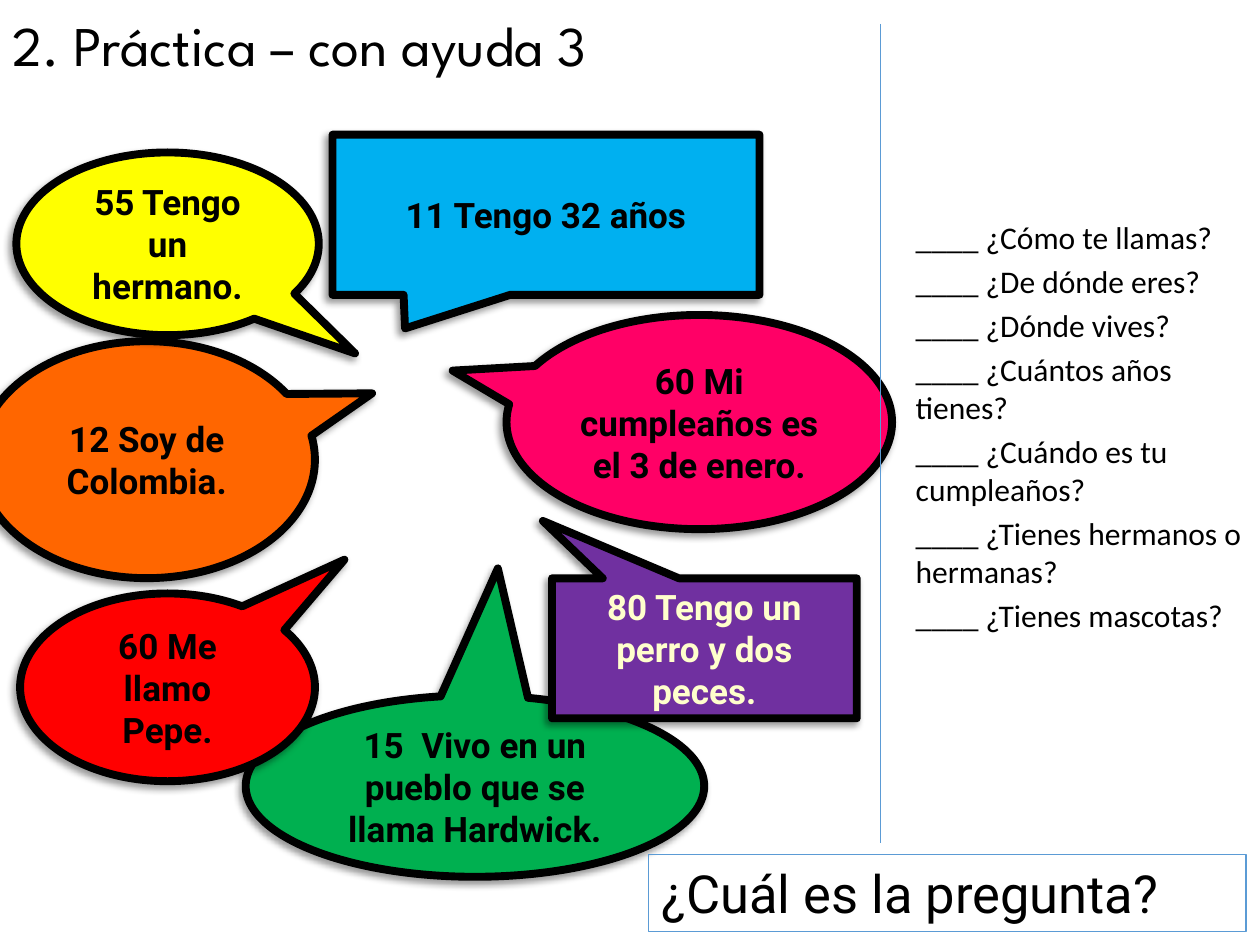
from lxml import etree
from pptx import Presentation
from pptx.dml.color import RGBColor
from pptx.enum import shapes, text
from pptx.oxml import ns
from pptx.util import Pt

BLACK = RGBColor(0, 0, 0)
CREAM = RGBColor(0xFF, 0xFF, 0xCC)
RULE_BLUE = RGBColor(0x5B, 0x9B, 0xD5)
SKY = RGBColor(0x00, 0xB0, 0xF0)
PINK = RGBColor(0xFF, 0x00, 0x66)
GREEN = RGBColor(0x00, 0xB0, 0x50)
ORANGE = RGBColor(0xFF, 0x66, 0x00)
PURPLE = RGBColor(0x70, 0x30, 0xA0)
YELLOW = RGBColor(0xFF, 0xFF, 0x00)
RED = RGBColor(0xFF, 0x00, 0x00)

OVAL = shapes.MSO_SHAPE.OVAL_CALLOUT
BOX = shapes.MSO_SHAPE.RECTANGULAR_CALLOUT

TITLE = "2. Práctica – con ayuda 3"
PROMPT = "¿Cuál es la pregunta?"
QUESTIONS = [
    "¿Cómo te llamas?",
    "¿De dónde eres?",
    "¿Dónde vives?",
    "¿Cuántos años tienes?",
    "¿Cuándo es tu cumpleaños?",
    "¿Tienes hermanos o hermanas?",
    "¿Tienes mascotas?",
]
ANSWERS = [
    ("11 Tengo 32 años", BOX, SKY, BLACK, (190, 77, 244, 91.5), (-0.33, 0.71)),
    ("60 Mi cumpleaños es el 3 de enero.", OVAL, PINK, BLACK, (289.5, 180, 220.3, 122.4), (-0.64, -0.24)),
    ("15  Vivo en un pueblo que se llama Hardwick.", OVAL, GREEN, BLACK, (140.4, 397.4, 262, 103.7), (0.05, -1.2)),
    ("12 Soy de Colombia.", OVAL, ORANGE, BLACK, (-12.2, 195, 192.2, 135.4), (0.67, -0.28)),
    ("80 Tengo un perro y dos peces.", BOX, PURPLE, CREAM, (315.4, 330.5, 174.2, 80), (-0.53, -0.91)),
    ("55 Tengo un hermano.", OVAL, YELLOW, BLACK, (9.4, 87.1, 172.8, 104.4), (0.62, 0.6)),
]
NAME_ANSWER = ("60 Me llamo Pepe.", OVAL, RED, BLACK, (11.5, 339.1, 168.5, 107.3), (0.6, -0.68))

deck = Presentation()
deck.slide_width, deck.slide_height = Pt(720), Pt(540)
slide = deck.slides.add_slide(deck.slide_layouts[6])


def write(frame, lines, font, size, color, bold=False, align=text.PP_ALIGN.LEFT, gap=0):
    frame.word_wrap = True
    for index, line in enumerate(lines):
        paragraph = frame.paragraphs[0] if index == 0 else frame.add_paragraph()
        paragraph.alignment = align
        paragraph.space_after = Pt(gap)
        run = paragraph.add_run()
        run.text = line
        run.font.name, run.font.size, run.font.bold = font, Pt(size), bold
        run.font.color.rgb = color


def add_shadow(bubble):
    effects = bubble._element.spPr.find(ns.qn("a:effectLst"))
    shadow = etree.SubElement(
        effects, ns.qn("a:outerShdw"), blurRad=str(Pt(4)), dist=str(Pt(3)),
        dir=str(135 * 60000), algn="tr", rotWithShape="0")
    tint = etree.SubElement(shadow, ns.qn("a:srgbClr"), val=str(BLACK))
    etree.SubElement(tint, ns.qn("a:alpha"), val="40000")


def add_bubble(answer, outline, fill, ink, place, tail):
    bubble = slide.shapes.add_shape(outline, *map(Pt, place))
    bubble.adjustments[0], bubble.adjustments[1] = tail
    bubble.fill.solid()
    bubble.fill.fore_color.rgb = fill
    bubble.line.color.rgb = BLACK
    bubble.line.width = Pt(4.5)
    bubble.shadow.inherit = False
    add_shadow(bubble)
    bubble.text_frame.vertical_anchor = text.MSO_ANCHOR.MIDDLE
    write(bubble.text_frame, [answer], "Roboto", 20, ink, True, text.PP_ALIGN.CENTER)


for answer in ANSWERS:
    add_bubble(*answer)

prompt = slide.shapes.add_shape(shapes.MSO_SHAPE.RECTANGLE, Pt(370.8), Pt(488.2), Pt(341.3), Pt(43.9))
prompt.fill.background()
prompt.line.color.rgb = RULE_BLUE
prompt.line.width = Pt(0.75)
prompt.shadow.inherit = False
prompt.text_frame.vertical_anchor = text.MSO_ANCHOR.TOP
write(prompt.text_frame, [PROMPT], "Roboto", 30, BLACK)

divider = slide.shapes.add_connector(shapes.MSO_CONNECTOR.STRAIGHT, Pt(503.3), Pt(13.7), Pt(503.3), Pt(481.7))
divider.line.color.rgb = RULE_BLUE
divider.line.width = Pt(0.5)
etree.SubElement(divider._element.spPr, ns.qn("a:effectLst"))

questions = slide.shapes.add_textbox(Pt(516.2), Pt(121), Pt(200.9), Pt(251.3))
write(questions.text_frame, ["____ " + q for q in QUESTIONS], "Calibri", 18, BLACK, gap=3.6)

add_bubble(*NAME_ANSWER)

title = slide.shapes.add_textbox(Pt(0), Pt(2.2), Pt(512.6), Pt(46))
write(title.text_frame, [TITLE], "League Spartan", 32, BLACK)

deck.save("out.pptx")
